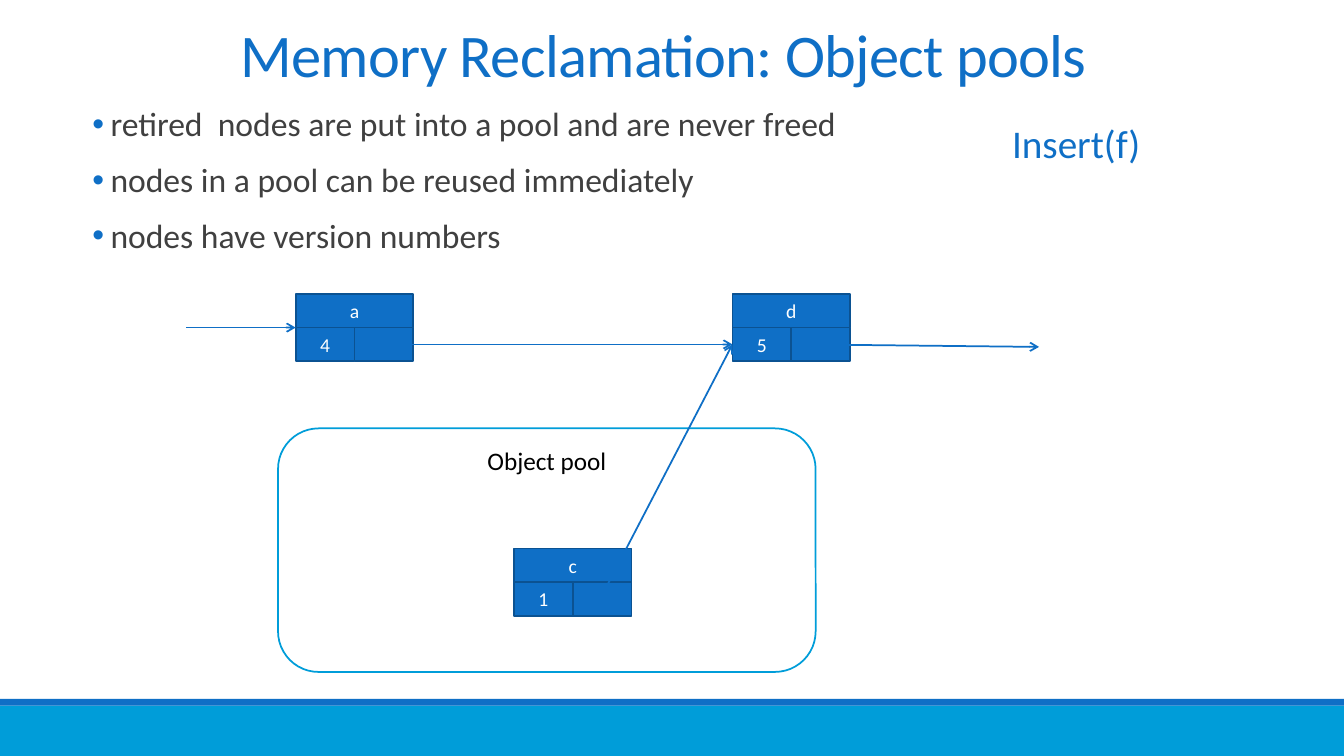
from lxml import etree
from pptx import Presentation
from pptx import util as u
from pptx.dml.color import RGBColor
from pptx.enum import shapes, text
from pptx.oxml import ns

BLUE = RGBColor(0x0F, 0x6F, 0xC6)
DARK_BLUE = RGBColor(0x0B, 0x52, 0x92)
CYAN = RGBColor(0x00, 0x9D, 0xD9)
GREY = RGBColor(0x40, 0x40, 0x40)
BLACK = RGBColor(0, 0, 0)
WHITE = RGBColor(0xFF, 0xFF, 0xFF)

COLUMNS, ROWS = 160, 90
NODE_COLUMNS, NODE_ROWS = 14, 4
CELL = u.Inches(7.5) // ROWS


def grid(*lengths):
    return [round(length * CELL) for length in lengths]


def add_run(paragraph, words, size, color):
    run = paragraph.add_run()
    run.text = words
    run.font.name = "Calibri"
    run.font.size = u.Pt(size)
    run.font.color.rgb = color
    return run


def place(placeholder, box):
    placeholder.left, placeholder.top, placeholder.width, placeholder.height = grid(*box)
    frame = placeholder.text_frame
    frame.word_wrap = True
    frame.auto_size = text.MSO_AUTO_SIZE.NONE
    return frame


def add_panel(slide, box, fill, line=None, kind=shapes.MSO_SHAPE.RECTANGLE):
    panel = slide.shapes.add_shape(kind, *grid(*box))
    panel.shadow.inherit = False
    panel.fill.solid()
    panel.fill.fore_color.rgb = fill
    if line is None:
        panel.line.fill.background()
    else:
        panel.line.color.rgb = line
        panel.line.width = u.Pt(1.25)
    return panel


def add_footer_bars(slide, top):
    add_panel(slide, (0, top, COLUMNS, ROWS - top), CYAN)
    add_panel(slide, (0, top - 0.8, COLUMNS, 0.8), BLUE)


def add_title(slide, box, words):
    frame = place(slide.shapes.title, box)
    frame.vertical_anchor = text.MSO_ANCHOR.BOTTOM
    paragraph = frame.paragraphs[0]
    paragraph.alignment = text.PP_ALIGN.LEFT
    paragraph.line_spacing = 0.85
    run = add_run(paragraph, words, 43.2, BLUE)
    run.font._element.set("spc", "-50")


def add_bullets(slide, box, points):
    frame = place(slide.placeholders[1], box)
    frame.vertical_anchor = text.MSO_ANCHOR.TOP
    frame.margin_left = frame.margin_right = 0
    for index, point in enumerate(points):
        paragraph = frame.add_paragraph() if index else frame.paragraphs[0]
        paragraph.line_spacing = 0.9
        paragraph.space_before = u.Pt(12 if index else 0)
        paragraph.space_after = u.Pt(2)
        properties = paragraph._p.get_or_add_pPr()
        indent = u.Inches(0.18)
        properties.set("marL", str(indent))
        properties.set("indent", str(-indent))
        bullet_color = etree.SubElement(properties, ns.qn("a:buClr"))
        etree.SubElement(bullet_color, ns.qn("a:srgbClr"), val=str(BLUE))
        etree.SubElement(properties, ns.qn("a:buChar"), char="•")
        add_run(paragraph, point, 24, GREY)


def add_operation(slide, box, words):
    frame = slide.shapes.add_textbox(*grid(*box)).text_frame
    frame.word_wrap = False
    add_run(frame.paragraphs[0], words, 28, BLUE)


def add_pool(slide, box, label):
    pool = add_panel(slide, box, WHITE, CYAN, shapes.MSO_SHAPE.ROUNDED_RECTANGLE)
    frame = pool.text_frame
    frame.vertical_anchor = text.MSO_ANCHOR.TOP
    paragraph = frame.paragraphs[0]
    paragraph.alignment = text.PP_ALIGN.CENTER
    add_run(paragraph, label, 18, BLACK)


def add_node(slide, left, top, key, version):
    half = NODE_COLUMNS / 2
    middle = top + NODE_ROWS
    fields = (
        (left, top, NODE_COLUMNS, key),
        (left + half, middle, half, ""),
        (left, middle, half, version),
    )
    for field_left, field_top, width, label in fields:
        field = add_panel(slide, (field_left, field_top, width, NODE_ROWS), BLUE, DARK_BLUE)
        if label:
            frame = field.text_frame
            frame.margin_top = frame.margin_bottom = 0
            frame.vertical_anchor = text.MSO_ANCHOR.MIDDLE
            paragraph = frame.paragraphs[0]
            paragraph.alignment = text.PP_ALIGN.CENTER
            add_run(paragraph, label, 14, WHITE)
    return field


def add_pointer(slide, start, end, target=None):
    pointer = slide.shapes.add_connector(
        shapes.MSO_CONNECTOR.STRAIGHT, *grid(*start, *end))
    if target is not None:
        pointer.end_connect(target, 1)
    pointer.line.color.rgb = BLUE
    pointer.line.width = u.Pt(1.25)
    etree.SubElement(pointer.line._get_or_add_ln(), ns.qn("a:tailEnd"), type="arrow")
    etree.SubElement(pointer._element.spPr, ns.qn("a:effectLst"))


def add_list_diagram(slide, box):
    left, top, width, height = box
    head = left + 13
    link_row = top + 1.5 * NODE_ROWS
    add_pool(slide, (left + 10.9, top + 16, 64, height - 16), "Object pool")
    add_node(slide, head, top, "a", "4")
    add_node(slide, head + 26, top + 30.3, "c", "1")
    version_d = add_node(slide, head + 52, top, "d", "5")
    d_left = (head + 52, link_row)
    add_pointer(slide, (left, top + NODE_ROWS), (head, top + NODE_ROWS))
    add_pointer(slide, (head + 36.4, link_row + 30), d_left, version_d)
    add_pointer(slide, (head + 11, link_row), d_left, version_d)
    add_pointer(slide, (head + 60.4, link_row), (left + width, link_row + 0.3))


def main():
    deck = Presentation()
    deck.slide_width, deck.slide_height = grid(COLUMNS, ROWS)
    slide = deck.slides.add_slide(deck.slide_layouts[1])
    add_footer_bars(slide, 84)
    add_list_diagram(slide, (22.2, 35, 101.5, 45))
    add_bullets(slide, (11, 12.2, 92.2, 19), (
        "retired  nodes are put into a pool and are never freed",
        "nodes in a pool can be reused immediately",
        "nodes have version numbers",
    ))
    add_operation(slide, (119.3, 13.6, 17.9, 6.8), "Insert(f)")
    add_title(slide, (27.4, 1.1, 104.2, 10.2), "Memory Reclamation: Object pools")
    deck.save("out.pptx")


if __name__ == "__main__":
    main()
